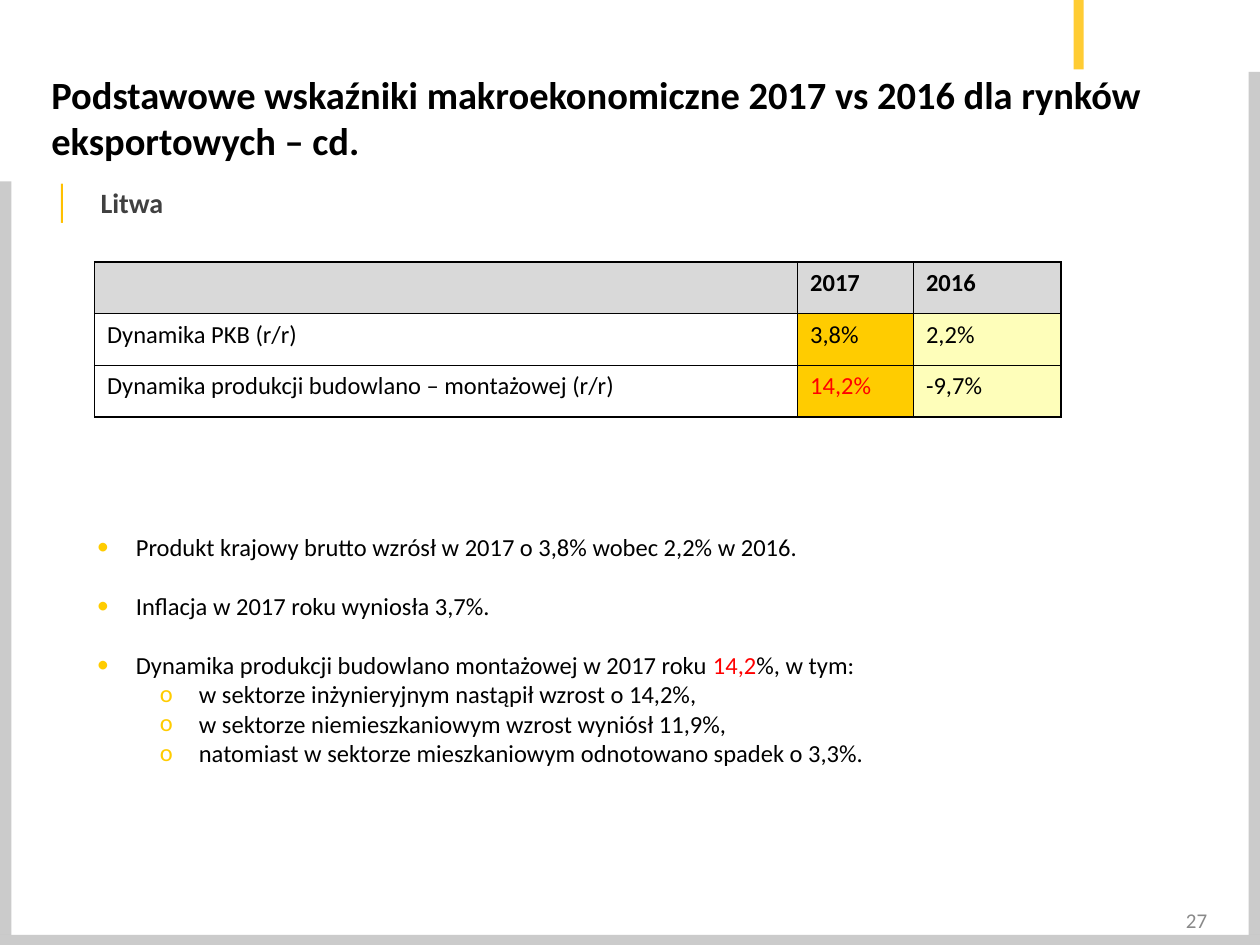
import pptx
import pptx.util
import pptx.dml.color
import pptx.enum.shapes
import pptx.enum.text
import pptx.oxml
import pptx.oxml.ns
from pptx.util import Inches

FONT = "Calibri"
COLORS = {
    "black": "000000", "white": "FFFFFF", "red": "FF0000",
    "dark": "404040", "page": "898989", "frame": "BFBFBF",
    "accent": "FFC000", "gold": "FFCC00", "cream": "FEFEBA", "header": "D9D9D9",
}
MIDDLE = pptx.enum.text.MSO_ANCHOR.MIDDLE


def rgb(name):
    return pptx.dml.color.RGBColor.from_string(COLORS[name])


def add_xml(parent, tag, **attrs):
    el = pptx.oxml.parse_xml(f"<a:{tag} {pptx.oxml.ns.nsdecls('a')}/>")
    for key, value in attrs.items():
        el.set(key, str(value))
    parent.append(el)
    return el


def add_run(p, text, size, color="black", bold=False):
    r = p.add_run()
    r.text = text
    r.font.name = FONT
    r.font.size = pptx.util.Pt(size)
    r.font.bold = bold
    r.font.color.rgb = rgb(color)


def set_bullet(p, char, color, margin, indent, percent=100):
    pPr = p._p.get_or_add_pPr()
    pPr.set("marL", str(Inches(margin)))
    pPr.set("indent", str(Inches(-indent)))
    add_xml(add_xml(pPr, "buClr"), "srgbClr", val=COLORS[color])
    add_xml(pPr, "buSzPct", val=percent * 1000)
    add_xml(pPr, "buFont", typeface=FONT)
    add_xml(pPr, "buChar", char=char)


def add_bar(s, left, top, width, height, color):
    sp = s.shapes.add_shape(pptx.enum.shapes.MSO_SHAPE.RECTANGLE, Inches(left),
                            Inches(top), Inches(width), Inches(height))
    sp.shadow.inherit = False
    sp.fill.solid()
    sp.fill.fore_color.rgb = rgb(color)
    sp.line.fill.background()
    fill_color = sp._element.spPr.find(".//" + pptx.oxml.ns.qn("a:srgbClr"))
    add_xml(fill_color, "alpha", val=80000)


def add_text_frame(s, left, top, width, height, anchor=pptx.enum.text.MSO_ANCHOR.TOP):
    sp = s.shapes.add_textbox(Inches(left), Inches(top), Inches(width), Inches(height))
    tf = sp.text_frame
    tf.word_wrap = True
    tf.vertical_anchor = anchor
    return tf


def set_borders(cell):
    tcPr = cell._tc.get_or_add_tcPr()
    for side in ("lnL", "lnR", "lnT", "lnB"):
        ln = add_xml(tcPr, side, w=pptx.util.Pt(1))
        add_xml(add_xml(ln, "solidFill"), "srgbClr", val=COLORS["black"])


def add_indicator_table(s, rows):
    widths, row_height = (5.58, 0.92, 1.17), 0.41
    table = s.shapes.add_table(
        len(rows), len(widths), Inches(0.75), Inches(2.08),
        Inches(sum(widths)), Inches(row_height * len(rows))).table
    for column, width in zip(table.columns, widths):
        column.width = Inches(width)
    for i, row in enumerate(rows):
        table.rows[i].height = Inches(row_height)
        fills = ("white", "gold", "cream") if i else ("header",) * 3
        for j, (text, fill) in enumerate(zip(row, fills)):
            cell = table.cell(i, j)
            set_borders(cell)
            cell.fill.solid()
            cell.fill.fore_color.rgb = rgb(fill)
            if text:
                color = "red" if text == "14,2%" else "black"
                add_run(cell.text_frame.paragraphs[0], text, 14, color, bold=i == 0)


def add_comments(s, items):
    tf = add_text_frame(s, 0.67, 4.17, 8.25, 1.99)
    for i, (level, runs) in enumerate(items):
        p = tf.add_paragraph() if i else tf.paragraphs[0]
        p.level = level
        set_bullet(p, "•o"[level], "gold", 0.31 + 0.5 * level, 0.31)
        if i and level == 0:
            p.space_before = pptx.util.Pt(17)
        for text, color in runs:
            add_run(p, text, 14, color)


def main():
    prs = pptx.Presentation()
    prs.slide_width, prs.slide_height = Inches(10), Inches(7.5)
    s = prs.slides.add_slide(prs.slide_layouts[6])

    # Frame
    add_bar(s, 8.52, 0, 0.08, 0.55, "accent")
    add_bar(s, 9.91, 0.57, 0.09, 6.85, "frame")
    add_bar(s, 0, 1.44, 0.09, 5.98, "frame")
    add_bar(s, 0, 7.42, 10, 0.09, "frame")

    # Country heading
    p = add_text_frame(s, 0.32, 1.42, 9.38, 0.39).paragraphs[0]
    set_bullet(p, "│", "accent", 0.38, 0.38, 135)
    add_run(p, "Litwa", 16, "dark", bold=True)

    # Indicators
    add_indicator_table(s, [
        ("", "2017", "2016"),
        ("Dynamika PKB (r/r)", "3,8%", "2,2%"),
        ("Dynamika produkcji budowlano – montażowej (r/r)", "14,2%", "-9,7%"),
    ])

    # Comments
    add_comments(s, [
        (0, [("Produkt krajowy brutto wzrósł w 2017 o 3,8% wobec 2,2% w 2016.", "black")]),
        (0, [("Inflacja w 2017 roku wyniosła 3,7%.", "black")]),
        (0, [("Dynamika produkcji budowlano montażowej w 2017 roku ", "black"),
             ("14,2", "red"), ("%, w tym:", "black")]),
        (1, [("w sektorze inżynieryjnym nastąpił wzrost o 14,2%,", "black")]),
        (1, [("w sektorze niemieszkaniowym wzrost wyniósł 11,9%,", "black")]),
        (1, [("natomiast w sektorze mieszkaniowym odnotowano spadek o 3,3%.", "black")]),
    ])

    # Title and page number
    p = add_text_frame(s, 0.31, 0.62, 9.38, 0.62, MIDDLE).paragraphs[0]
    add_run(p, "Podstawowe wskaźniki makroekonomiczne 2017 vs 2016 dla rynków "
               "eksportowych – cd.", 22, bold=True)
    p = add_text_frame(s, 7.35, 7.18, 2.33, 0.24, MIDDLE).paragraphs[0]
    p.alignment = pptx.enum.text.PP_ALIGN.RIGHT
    add_run(p, "27", 12, "page")

    prs.save("out.pptx")


if __name__ == "__main__":
    main()
